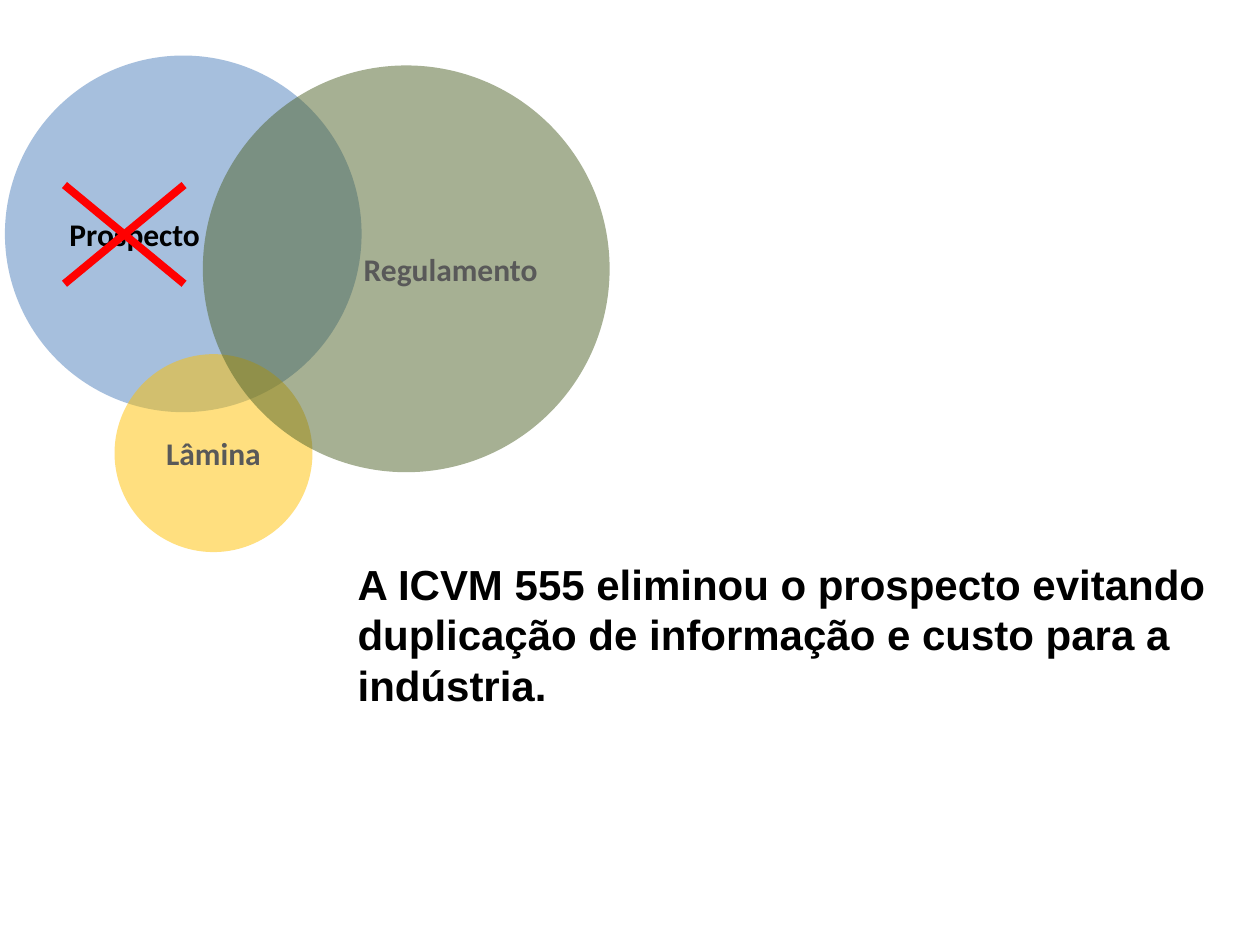
from dataclasses import dataclass

from lxml import etree
from pptx import Presentation
from pptx.dml.color import RGBColor
from pptx.enum import shapes, text
from pptx.oxml import ns
from pptx.util import Cm, Pt


@dataclass(frozen=True)
class Theme:
    blue: str = "4F81BD"
    gold: str = "FFC000"
    green: str = "4F6228"
    red: str = "FF0000"
    black: str = "000000"
    grey: str = "595959"
    label: int = 18
    body: int = 24
    stroke: float = 4.5
    alpha: int = 50


THEME = Theme()
ALIGN = text.PP_ALIGN


def add_run(para, words, font, size, color):
    run = para.add_run()
    run.text = words
    run.font.name = font
    run.font.size = Pt(size)
    run.font.bold = True
    run.font.color.rgb = RGBColor.from_string(color)


def add_circle(slide, left, top, size, fill, words, color, align):
    """Add a see-through circle with one label."""
    disc = slide.shapes.add_shape(
        shapes.MSO_SHAPE.OVAL, Cm(left), Cm(top), Cm(size), Cm(size))
    disc.shadow.inherit = False
    disc.fill.solid()
    disc.fill.fore_color.rgb = RGBColor.from_string(fill)
    tint = disc.fill._xPr.find(".//" + ns.qn("a:srgbClr"))
    etree.SubElement(tint, ns.qn("a:alpha"), val=str(THEME.alpha * 1000))
    disc.line.fill.background()
    frame = disc.text_frame
    frame.vertical_anchor = text.MSO_ANCHOR.MIDDLE
    para = frame.paragraphs[0]
    para.alignment = align
    add_run(para, words, "Calibri", THEME.label, color)


def add_note(slide, left, top, width, height, words):
    box = slide.shapes.add_textbox(Cm(left), Cm(top), Cm(width), Cm(height))
    frame = box.text_frame
    frame.word_wrap = True
    frame.margin_left = Cm(1.52)
    add_run(frame.paragraphs[0], words, "Arial", THEME.body, THEME.black)


def add_cross(slide, left, top, right, base):
    """Strike out an area with two grouped diagonals."""
    group = slide.shapes.add_group_shape()
    for start, end in ((base, top), (top, base)):
        line = group.shapes.add_connector(
            shapes.MSO_CONNECTOR.STRAIGHT,
            Cm(left), Cm(start), Cm(right), Cm(end))
        line.line.color.rgb = RGBColor.from_string(THEME.red)
        line.line.width = Pt(THEME.stroke)
        etree.SubElement(line._element.spPr, ns.qn("a:effectLst"))


def main():
    deck = Presentation()
    deck.slide_width, deck.slide_height = Cm(25.4), Cm(19.05)
    slide = deck.slides.add_slide(deck.slide_layouts[6])

    add_circle(slide, 0.1, 1.12, 7.19, THEME.blue,
               "Prospecto", THEME.black, ALIGN.LEFT)
    add_note(slide, 5.69, 11.13, 18.9, 5.38,
             "A ICVM 555 eliminou o prospecto evitando duplicação de "
             "informação e custo para a indústria.")
    add_circle(slide, 2.31, 7.14, 3.99, THEME.gold,
               "Lâmina", THEME.grey, ALIGN.CENTER)
    add_circle(slide, 4.09, 1.32, 8.2, THEME.green,
               "Regulamento", THEME.grey, ALIGN.RIGHT)
    add_cross(slide, 1.3, 3.73, 3.71, 5.72)

    deck.save("out.pptx")


if __name__ == "__main__":
    main()
